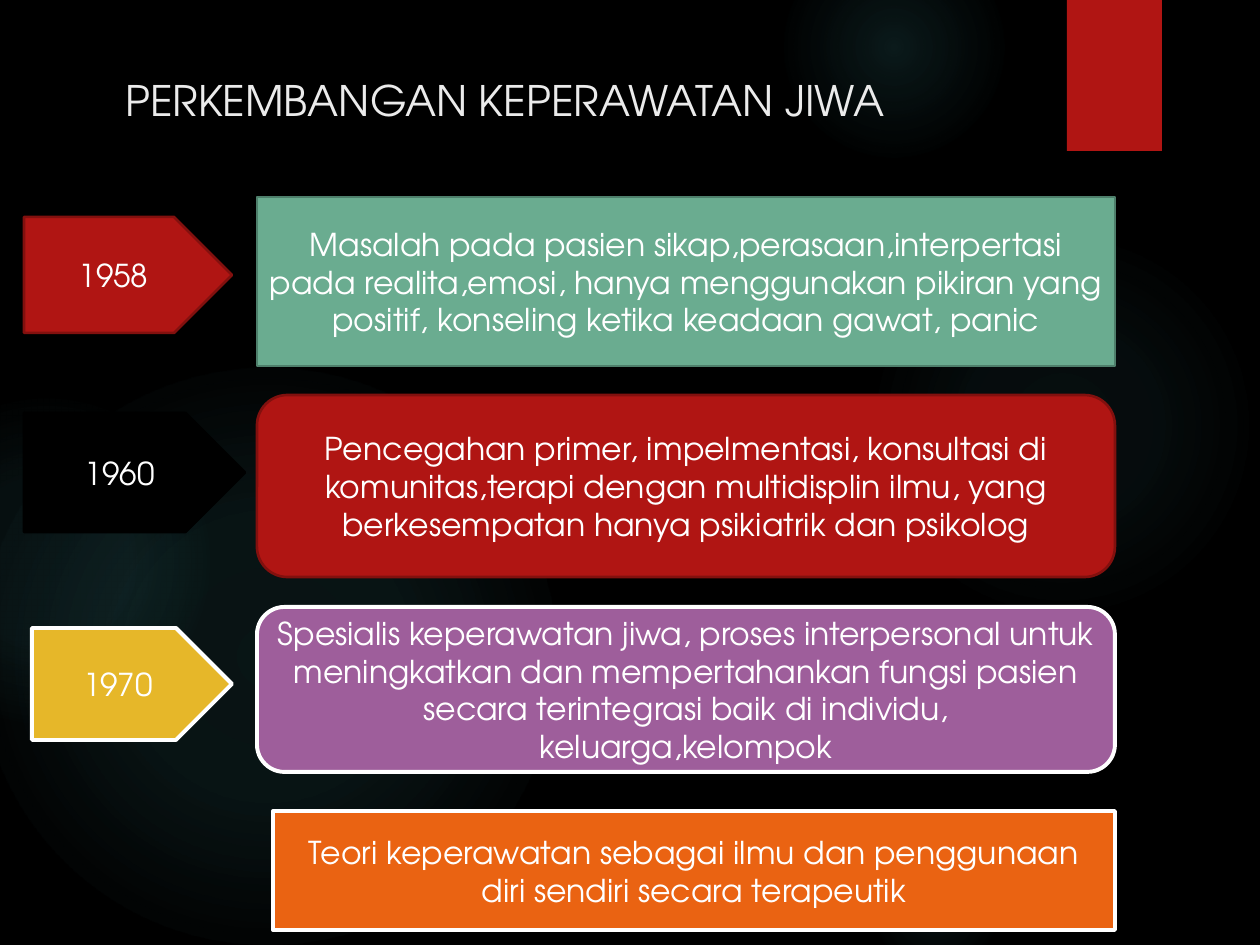
import pptx
import pptx.util
import pptx.dml.color
import pptx.enum.shapes
import pptx.enum.text
import pptx.oxml
import pptx.oxml.ns

PX = 914400 / 126
FONT = "TeX Gyre Adventor"
SHAPE = pptx.enum.shapes.MSO_SHAPE
NAMESPACE = pptx.oxml.ns.nsdecls("a")
COLORS = {
    "black": "000000", "white": "FFFFFF", "title": "EBEBEB", "glow": "50B9C1",
    "red": "B01513", "dark red": "82100E", "green": "6AAC90",
    "dark green": "4E7F6B", "yellow": "E6B729", "purple": "9E5E9B",
    "orange": "EA6312",
}

# Left, top, diameter, then (position, opacity) stops in percent
GLOWS = [
    (868, 231, 388, [(0, 7), (36, 6), (69, 0)]),
    (784, -63, 220, [(0, 14), (36, 7), (73, 0)]),
    (868, 840, 136, [(0, 9), (36, 5), (66, 0)]),
    (-21, 368, 577, [(0, 11), (36, 10), (75, 0)]),
    (-116, 399, 325, [(0, 8), (36, 8), (72, 0)]),
]

# Kind, box, fill, line, line width, text
BLOCKS = [
    (SHAPE.PENTAGON, (24, 217, 208, 116), "red", "dark red", 1.5, "1958"),
    (SHAPE.RECTANGLE, (257, 197, 858, 169), "green", "dark green", 1.5,
     "Masalah pada pasien sikap,perasaan,interpertasi pada realita,emosi, "
     "hanya menggunakan pikiran yang positif, konseling ketika keadaan "
     "gawat, panic"),
    (SHAPE.PENTAGON, (24, 413, 221, 119), "black", "black", 1.5, "1960"),
    (SHAPE.ROUNDED_RECTANGLE, (257, 395, 858, 182), "red", "dark red", 1.5,
     "Pencegahan primer, impelmentasi, konsultasi di komunitas,terapi dengan "
     "multidisplin ilmu, yang berkesempatan hanya psikiatrik dan psikolog"),
    (SHAPE.PENTAGON, (32, 628, 200, 112), "yellow", "white", 2.25, "1970"),
    (SHAPE.ROUNDED_RECTANGLE, (257, 607, 858, 165), "purple", "white", 2.25,
     "Spesialis keperawatan jiwa, proses interpersonal untuk meningkatkan "
     "dan mempertahankan fungsi pasien secara terintegrasi baik di individu, "
     "keluarga,kelompok"),
    (SHAPE.RECTANGLE, (273, 811, 842, 119), "orange", "white", 2.25,
     "Teori keperawatan sebagai ilmu dan penggunaan diri sendiri secara "
     "terapeutik"),
]


def emu(pixels):
    return pptx.util.Emu(round(pixels * PX))


def rgb(name):
    return pptx.dml.color.RGBColor.from_string(COLORS[name])


def add_plain_shape(slide, kind, box):
    shape = slide.shapes.add_shape(kind, *map(emu, box))
    shape.shadow.inherit = False
    shape.line.fill.background()
    return shape


def fill_solid(fill, color):
    fill.solid()
    fill.fore_color.rgb = rgb(color)


def set_text(shape, text, size, color):
    frame = shape.text_frame
    frame.word_wrap = True
    frame.auto_size = pptx.enum.text.MSO_AUTO_SIZE.NONE
    frame.vertical_anchor = pptx.enum.text.MSO_ANCHOR.MIDDLE
    frame.text = text
    paragraph = frame.paragraphs[0]
    paragraph.alignment = pptx.enum.text.PP_ALIGN.CENTER
    paragraph.font.name = FONT
    paragraph.font.size = pptx.util.Pt(size)
    paragraph.font.color.rgb = rgb(color)


def add_glow(slide, left, top, diameter, stops):
    shape = add_plain_shape(slide, SHAPE.OVAL, (left, top, diameter, diameter))
    stop_xml = "".join(
        f'<a:gs pos="{position * 1000}"><a:srgbClr val="{COLORS["glow"]}">'
        f'<a:alpha val="{opacity * 1000}"/></a:srgbClr></a:gs>'
        for position, opacity in stops)
    gradient = pptx.oxml.parse_xml(
        f'<a:gradFill {NAMESPACE} rotWithShape="1"><a:gsLst>{stop_xml}</a:gsLst>'
        '<a:path path="circle"><a:fillToRect l="50000" t="50000" r="50000" '
        'b="50000"/></a:path></a:gradFill>')
    geometry = shape.element.spPr.find(pptx.oxml.ns.qn("a:prstGeom"))
    geometry.addnext(gradient)


def add_corner_tab(slide):
    shape = add_plain_shape(slide, SHAPE.RECTANGLE, (1067, 0, 95, 151))
    fill_solid(shape.fill, "red")
    effects = shape.element.spPr.find(pptx.oxml.ns.qn("a:effectLst"))
    effects.append(pptx.oxml.parse_xml(
        f'<a:outerShdw {NAMESPACE} blurRad="38100" dist="25400" dir="5400000" '
        f'rotWithShape="0"><a:srgbClr val="{COLORS["black"]}">'
        '<a:alpha val="45000"/></a:srgbClr></a:outerShdw>'))


def place_title(slide):
    title = slide.shapes.title
    title.left, title.top, title.width, title.height = map(emu, (24, 64, 973, 71))
    set_text(title, "PERKEMBANGAN KEPERAWATAN JIWA ", 24, "title")
    # Bring the title in front of the background
    slide.shapes.element.append(title.element)


def add_block(slide, kind, box, fill, line, line_width, text):
    shape = add_plain_shape(slide, kind, box)
    fill_solid(shape.fill, fill)
    fill_solid(shape.line.fill, line)
    shape.line.width = pptx.util.Pt(line_width)
    set_text(shape, text, 18, "white")


def main():
    presentation = pptx.Presentation()
    presentation.slide_width = emu(1260)
    presentation.slide_height = emu(945)
    slide = presentation.slides.add_slide(presentation.slide_layouts[5])

    # Background
    fill_solid(slide.background.fill, "black")
    for glow in GLOWS:
        add_glow(slide, *glow)
    add_corner_tab(slide)

    # Title and timeline
    place_title(slide)
    for block in BLOCKS:
        add_block(slide, *block)

    presentation.save("out.pptx")


if __name__ == "__main__":
    main()
